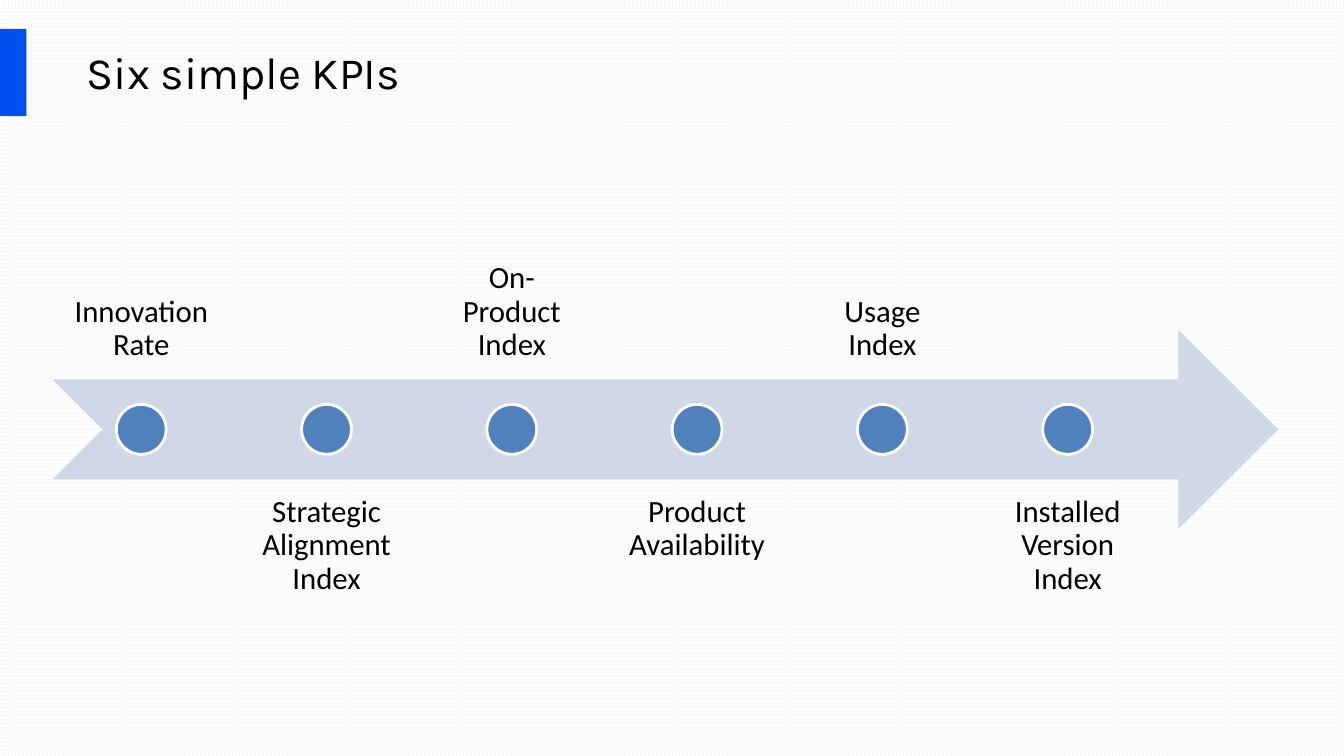
from pptx import Presentation
from pptx.dml.color import RGBColor
from pptx.enum.dml import MSO_PATTERN
from pptx.enum.shapes import MSO_SHAPE
from pptx.enum.text import MSO_ANCHOR, PP_ALIGN
from pptx.util import Pt

COLORS = {
    "accent": "0050EF",
    "arrow": "D0D8E8",
    "dot": "4F81BD",
    "grid": "F6F8FC",
    "white": "FFFFFF",
    "text": "000000",
}
KPIS = [
    "Innovation Rate",
    "Strategic Alignment Index",
    "On-Product Index",
    "Product Availability",
    "Usage Index",
    "Installed Version Index",
]
FIRST_CENTER, PITCH = 100.9, 132.35
ARROW_TOP, ARROW_H = 235.4, 142.6
LABEL_W, DOT = 126, 35.6
LABEL_TOPS = [128.2, 342]
ANCHORS = [MSO_ANCHOR.BOTTOM, MSO_ANCHOR.TOP]


def add_shape(kind, x, y, w, h, color):
    sp = s.shapes.add_shape(kind, Pt(x), Pt(y), Pt(w), Pt(h))
    sp.shadow.inherit = False
    sp.fill.solid()
    sp.fill.fore_color.rgb = RGBColor.from_string(COLORS[color])
    sp.line.fill.background()
    return sp


def add_text(text, x, y, w, h, font, size, anchor):
    tf = s.shapes.add_textbox(Pt(x), Pt(y), Pt(w), Pt(h)).text_frame
    tf.word_wrap = True
    tf.vertical_anchor = anchor
    tf.text = text
    r = tf.paragraphs[0].runs[0]
    r.font.name = font
    r.font.size = Pt(size)
    r.font.color.rgb = RGBColor.from_string(COLORS["text"])
    return tf


prs = Presentation()
prs.slide_width, prs.slide_height = Pt(960), Pt(540)
s = prs.slides.add_slide(prs.slide_layouts[6])

bg = s.background.fill
bg.patterned()
bg.pattern = MSO_PATTERN.LARGE_GRID
bg.fore_color.rgb = RGBColor.from_string(COLORS["grid"])
bg.back_color.rgb = RGBColor.from_string(COLORS["white"])

add_shape(MSO_SHAPE.RECTANGLE, 0, 20.6, 18.8, 62.4, "accent")
add_shape(MSO_SHAPE.NOTCHED_RIGHT_ARROW, 37.6, ARROW_TOP, 875.4, ARROW_H, "arrow")

for i, kpi in enumerate(KPIS):
    center = FIRST_CENTER + i * PITCH
    tf = add_text(kpi, center - LABEL_W / 2, LABEL_TOPS[i % 2], LABEL_W, ARROW_H,
                  "Calibri", 22, ANCHORS[i % 2])
    tf.margin_left = tf.margin_right = tf.margin_top = tf.margin_bottom = Pt(12.3)
    p = tf.paragraphs[0]
    p.alignment = PP_ALIGN.CENTER
    p.line_spacing = 0.9

    dot = add_shape(MSO_SHAPE.OVAL, center - DOT / 2, ARROW_TOP + (ARROW_H - DOT) / 2,
                    DOT, DOT, "dot")
    dot.line.color.rgb = RGBColor.from_string(COLORS["white"])
    dot.line.width = Pt(2)

add_text("Six simple KPIs", 54.9, 20.6, 858, 61.4, "Karla", 32, MSO_ANCHOR.MIDDLE)

prs.save("out.pptx")
